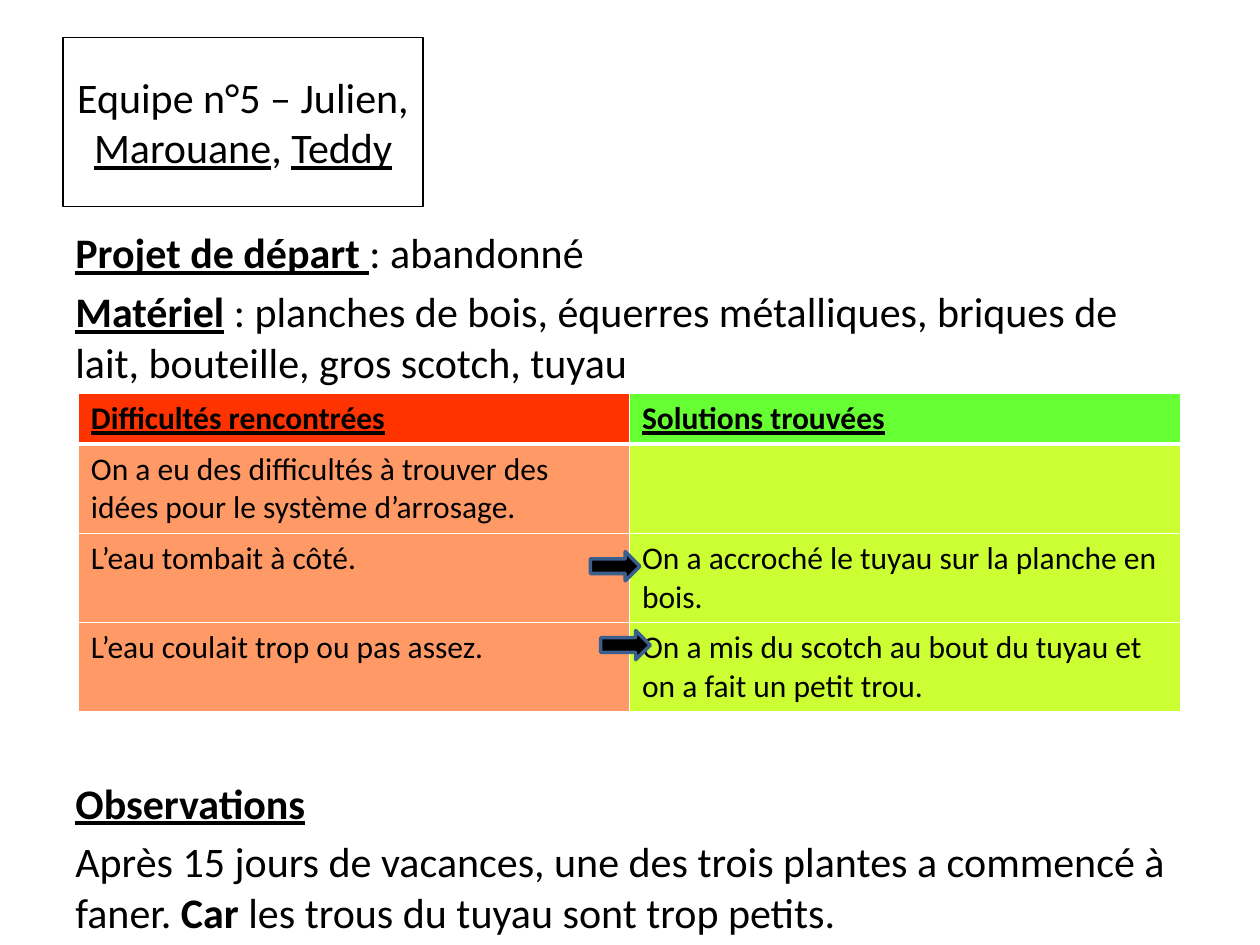
from lxml.etree import SubElement as Sub
from pptx import Presentation
from pptx.dml.color import RGBColor as Rgb
from pptx.enum.shapes import MSO_SHAPE as Shape
from pptx.enum.text import MSO_ANCHOR as Anchor, PP_ALIGN as Align
from pptx.oxml.ns import qn
from pptx.util import Cm, Pt

TEAM = [[("Equipe n°5 – Julien, ", ""), ("Marouane", "u"), (", ", ""), ("Teddy", "u")]]
START = [
    [("Projet de départ ", "bu"), (": abandonné", "")],
    [("Matériel", "bu"),
     (" : planches de bois, équerres métalliques, briques de lait, "
      "bouteille, gros scotch, tuyau", "")],
]
NOTES = [
    [("Observations", "bu")],
    [("Après 15 jours de vacances, une des trois plantes a commencé à faner. ", ""),
     ("Car ", "b"), ("les trous du tuyau sont trop petits.", "")],
]
ROWS = [
    ("Difficultés rencontrées", "Solutions trouvées"),
    ("On a eu des difficultés à trouver des idées pour le système d’arrosage.", ""),
    ("L’eau tombait à côté.", "On a accroché le tuyau sur la planche en bois."),
    ("L’eau coulait trop ou pas assez.",
     "On a mis du scotch au bout du tuyau et on a fait un petit trou."),
]
HEAD = ("FF3300", "66FF33")
BODY = ("FF9966", "CCFF33")


def paint(fill, color):
    fill.solid()
    fill.fore_color.rgb = Rgb.from_string(color)


def style(font, size, marks=""):
    font.name = "Calibri"
    font.size = Pt(size)
    font.bold = "b" in marks
    font.underline = "u" in marks
    paint(font.fill, "000000")


def write(frame, paras, align, gap=0):
    frame.word_wrap = True
    for i, parts in enumerate(paras):
        para = frame.add_paragraph() if i else frame.paragraphs[0]
        para.alignment = align
        para.space_before = Pt(gap)
        for text, marks in parts:
            run = para.add_run()
            run.text = text
            style(run.font, 24, marks)


def add_title(slide, box):
    shape = slide.shapes.add_shape(Shape.RECTANGLE, *map(Cm, box))
    shape.shadow.inherit = False
    shape.fill.background()
    paint(shape.line.fill, "000000")
    shape.line.width = Pt(0.75)
    shape.text_frame.vertical_anchor = Anchor.MIDDLE
    write(shape.text_frame, TEAM, Align.CENTER)


def add_text(slide, box, paras):
    shape = slide.shapes.add_textbox(*map(Cm, box))
    write(shape.text_frame, paras, Align.LEFT, 4.8)


def edge(cell, row):
    props = cell._tc.get_or_add_tcPr()
    thick = {0: "B", 1: "T"}.get(row)
    for side in "LRTB":
        width = Pt(3 if side == thick else 1)
        line = Sub(props, qn(f"a:ln{side}"), w=str(width))
        Sub(Sub(line, qn("a:solidFill")), qn("a:srgbClr"), val="FFFFFF")


def add_grid(slide, box):
    left, top, width, height = box
    table = slide.shapes.add_table(len(ROWS), 2, *map(Cm, box)).table
    first = 1.02
    rest = (height - first) / (len(ROWS) - 1)
    for col in table.columns:
        col.width = Cm(width / 2)
    for r, texts in enumerate(ROWS):
        table.rows[r].height = Cm(rest if r else first)
        for c, text in enumerate(texts):
            cell = table.cell(r, c)
            edge(cell, r)
            paint(cell.fill, (BODY if r else HEAD)[c])
            cell.text = text
            for run in cell.text_frame.paragraphs[0].runs:
                style(run.font, 18, "" if r else "bu")


def add_arrow(slide, box):
    shape = slide.shapes.add_shape(Shape.RIGHT_ARROW, *map(Cm, box))
    shape.shadow.inherit = False
    paint(shape.fill, "000000")
    paint(shape.line.fill, "3A5F8C")
    shape.line.width = Pt(2)


def main():
    deck = Presentation()
    deck.slide_width, deck.slide_height = Cm(25.4), Cm(19.05)
    slide = deck.slides.add_slide(deck.slide_layouts[6])
    add_title(slide, (1.27, 0.76, 7.26, 3.4))
    add_text(slide, (1.27, 4.45, 22.86, 3.5), START)
    add_text(slide, (1.27, 15.54, 22.86, 3.5), NOTES)
    add_grid(slide, (1.58, 7.93, 22.22, 6.42))
    for left, top in ((11.9, 11.12), (12.11, 12.71)):
        add_arrow(slide, (left, top, 1, 0.59))
    deck.save("out.pptx")


if __name__ == "__main__":
    main()
